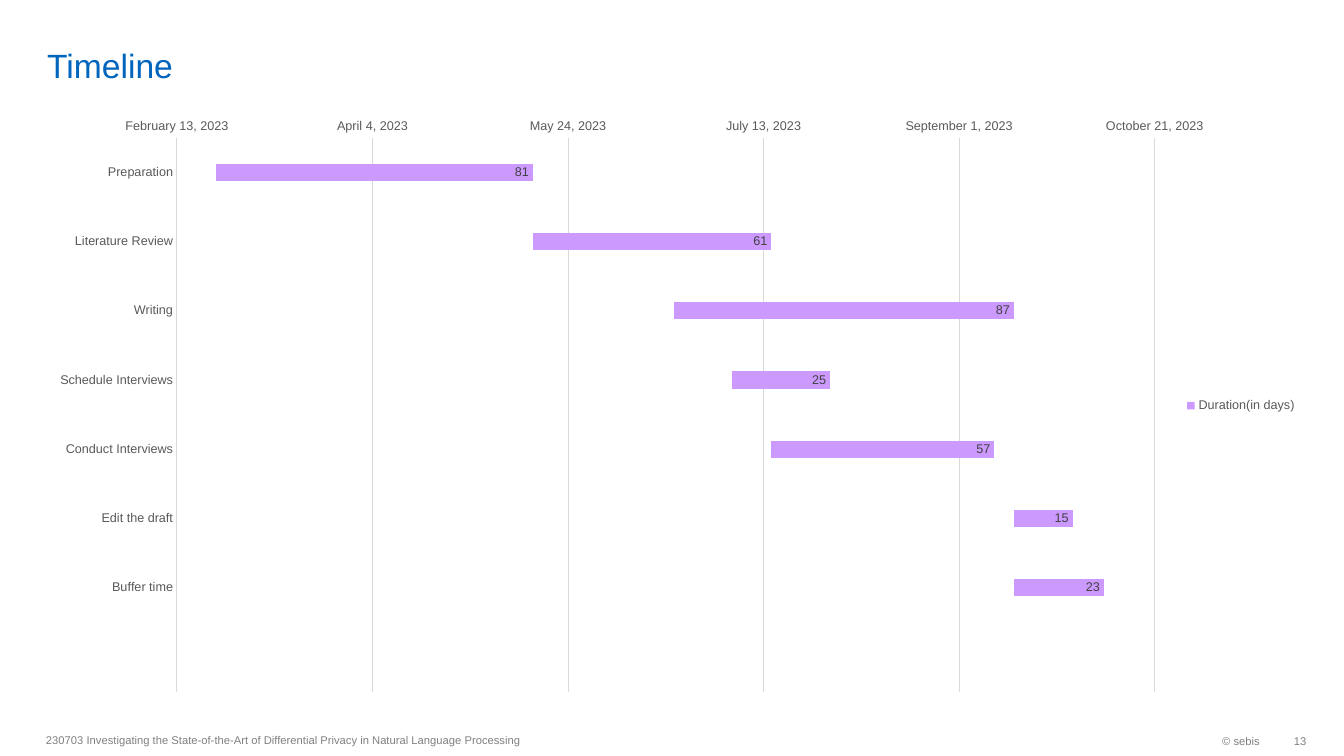
"""Build the thesis timeline slide with a Gantt-style stacked bar chart."""
from dataclasses import dataclass

import lxml.etree
import pptx
import pptx.chart.data
import pptx.dml.color
import pptx.enum.chart
import pptx.enum.text
import pptx.oxml
import pptx.oxml.ns
import pptx.util
from pptx.util import Cm

COLORS = {"title": "0065BD", "footer": "808080", "axis": "595959",
          "grid": "D9D9D9", "bar": "CC99FF", "value": "404040", "text": "000000"}
FONT = "Arial"
FIRST_DAY, LAST_DAY, STEP = 44970, 45220, 50
ANCHOR = pptx.enum.text.MSO_ANCHOR
ALIGN = pptx.enum.text.PP_ALIGN


@dataclass
class Label:
    text: str
    left: float
    top: float
    width: float
    height: float
    size: int = 8
    color: str = "footer"
    align: ALIGN = ALIGN.LEFT
    anchor: ANCHOR = ANCHOR.MIDDLE
    right_inset: float = 0.25
    v_inset: float = 0.13


@dataclass
class Task:
    name: str
    start: int | None
    days: int | None


LABELS = [
    Label("Timeline", 0.94, 0.13, 29.41, 2.01, 24, "title", anchor=ANCHOR.BOTTOM, v_inset=0),
    Label("© sebis", 26.06, 18.26, 5.94, 0.81, align=ALIGN.RIGHT),
    Label("230703 Investigating the State-of-the-Art of Differential Privacy "
          "in Natural Language Processing", 0.91, 18.24, 16, 0.81),
    Label("13", 32, 18.26, 0.92, 0.81, align=ALIGN.RIGHT, right_inset=0),
]

TASKS = [
    Task("Preparation", 44980, 81),
    Task("Literature Review", 45061, 61),
    Task("Writing", 45097, 87),
    Task("Schedule Interviews", 45112, 25),
    Task("Conduct Interviews", 45122, 57),
    Task("Edit the draft", 45184, 15),
    Task("Buffer time", 45184, 23),
    Task("", None, None),
]


def rgb(name: str) -> pptx.dml.color.RGBColor:
    """Return a palette colour."""
    return pptx.dml.color.RGBColor.from_string(COLORS[name])


def set_font(font, size: int, color: str) -> None:
    """Apply the slide font with a size and a colour."""
    font.name, font.size = FONT, pptx.util.Pt(size)
    font.color.rgb = rgb(color)


def set_line(line) -> None:
    """Give a chart line the thin grid style."""
    line.color.rgb, line.width = rgb("grid"), pptx.util.Pt(0.75)


def add_label(slide, label: Label) -> None:
    """Add one text box."""
    sp = slide.shapes.add_textbox(Cm(label.left), Cm(label.top), Cm(label.width), Cm(label.height))
    tf = sp.text_frame
    tf.word_wrap, tf.vertical_anchor = True, label.anchor
    tf.margin_left, tf.margin_right = Cm(0.25), Cm(label.right_inset)
    tf.margin_top = tf.margin_bottom = Cm(label.v_inset)
    p = tf.paragraphs[0]
    p.text, p.alignment = label.text, label.align
    set_font(p.font, label.size, label.color)


def place_plot(chart, x: float, y: float, w: float, h: float) -> None:
    """Fix the inner plot area as fractions of the chart."""
    plot_area = chart.plots[0]._element.getparent()
    for old in plot_area.findall(pptx.oxml.ns.qn("c:layout")):
        plot_area.remove(old)
    settings = {"layoutTarget": "inner", "xMode": "edge", "yMode": "edge",
                "x": x, "y": y, "w": w, "h": h}
    items = "".join(f'<c:{key} val="{val}"/>' for key, val in settings.items())
    plot_area.insert(0, pptx.oxml.parse_xml(
        f'<c:layout {pptx.oxml.ns.nsdecls("c")}><c:manualLayout>{items}</c:manualLayout></c:layout>'))


def hide_legend_entry(chart, index: int) -> None:
    """Remove one series from the legend."""
    entry = pptx.oxml.parse_xml(
        f'<c:legendEntry {pptx.oxml.ns.nsdecls("c")}><c:idx val="{index}"/>'
        '<c:delete val="1"/></c:legendEntry>')
    chart.legend._element.find(pptx.oxml.ns.qn("c:legendPos")).addnext(entry)


def add_timeline(slide) -> None:
    """Add the task chart."""
    enum = pptx.enum.chart
    data = pptx.chart.data.CategoryChartData()
    data.categories = [t.name for t in TASKS]
    data.add_series("StartDate", [t.start for t in TASKS])
    data.add_series("Duration(in days)", [t.days for t in TASKS])
    chart = slide.shapes.add_chart(enum.XL_CHART_TYPE.BAR_STACKED, Cm(0.94), Cm(2.72),
                                   Cm(32), Cm(15.01), data).chart
    set_font(chart.font, 10, "text")
    chart.has_title = False
    chart.has_legend = True
    chart.legend.position = enum.XL_LEGEND_POSITION.RIGHT
    chart.legend.include_in_layout = False
    set_font(chart.legend.font, 9, "axis")
    hide_legend_entry(chart, 1)

    plot = chart.plots[0]
    plot.gap_width, plot.overlap, plot.vary_by_categories = 300, 100, False
    start, duration = plot.series
    start.format.fill.background()
    duration.format.fill.solid()
    duration.format.fill.fore_color.rgb = rgb("bar")
    labels = duration.data_labels
    labels.show_value, labels.position = True, enum.XL_LABEL_POSITION.INSIDE_END
    set_font(labels.font, 9, "value")

    tasks, dates = chart.category_axis, chart.value_axis
    for axis in (tasks, dates):
        axis.major_tick_mark = axis.minor_tick_mark = enum.XL_TICK_MARK.NONE
        set_font(axis.tick_labels.font, 9, "axis")
    tasks.reverse_order = True
    set_line(tasks.format.line)
    dates.minimum_scale, dates.maximum_scale, dates.major_unit = FIRST_DAY, LAST_DAY, STEP
    dates.format.line.fill.background()
    dates.has_major_gridlines = True
    set_line(dates.major_gridlines.format.line)
    dates.tick_labels.number_format = r"[$-409]mmmm\ d\,\ yyyy;@"
    dates.tick_labels.number_format_is_linked = False
    place_plot(chart, 0.11, 0.05, 0.77, 0.93)


def main() -> None:
    """Build and save the slide."""
    prs = pptx.Presentation()
    prs.slide_width, prs.slide_height = Cm(33.87), Cm(19.05)
    slide = prs.slides.add_slide(prs.slide_layouts[6])
    for label in LABELS:
        add_label(slide, label)
    add_timeline(slide)
    prs.save("out.pptx")


if __name__ == "__main__":
    main()
